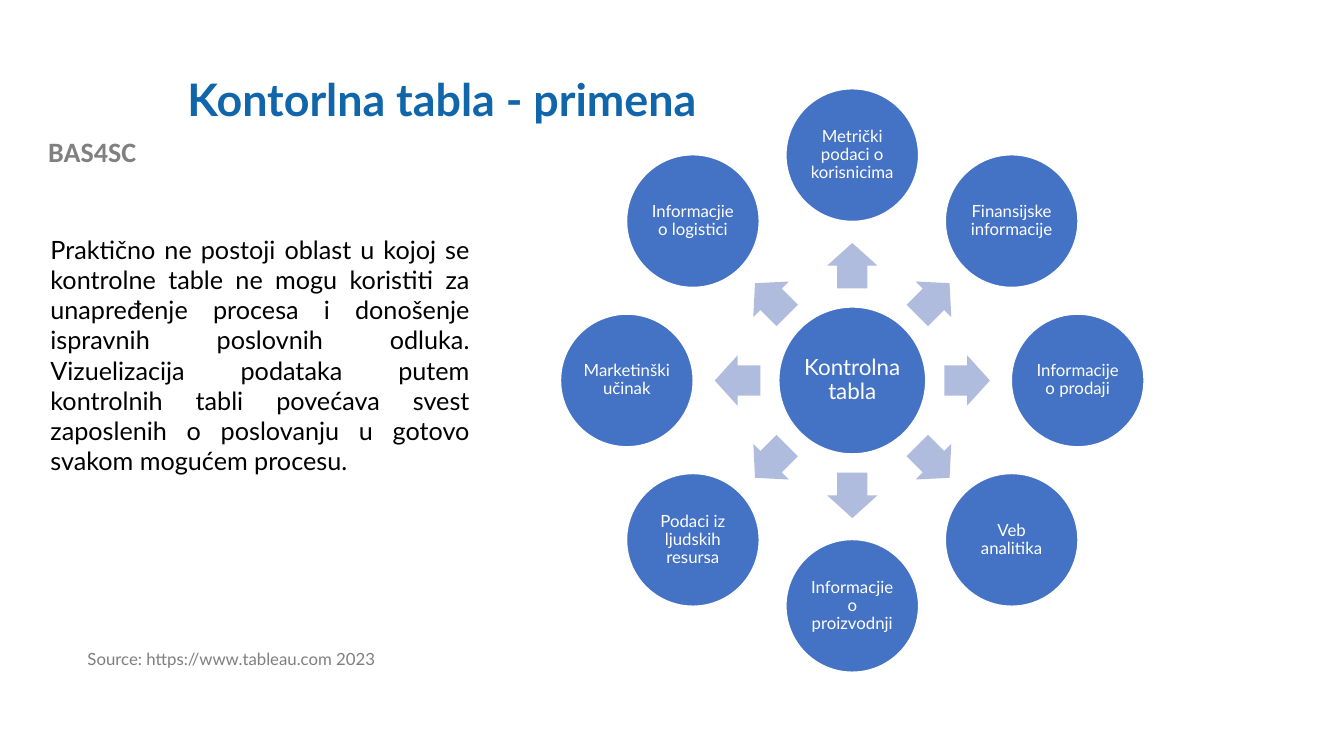
"""Build a slide with a dashboard hub and its ring of uses."""
import math
from dataclasses import dataclass

import pptx
import pptx.dml.color
import pptx.enum.shapes
import pptx.enum.text
import pptx.oxml.ns
import pptx.util
from lxml import etree

Pt = pptx.util.Pt
RGBColor = pptx.dml.color.RGBColor
Align = pptx.enum.text.PP_ALIGN
Anchor = pptx.enum.text.MSO_ANCHOR
Kind = pptx.enum.shapes.MSO_SHAPE

WHITE = RGBColor(0xFF, 0xFF, 0xFF)
BLACK = RGBColor(0x00, 0x00, 0x00)
NAVY = RGBColor(0x10, 0x65, 0xAB)
BLUE = RGBColor(0x44, 0x72, 0xC4)
PALE = RGBColor(0xB0, 0xBC, 0xDE)
GRAY = RGBColor(0x80, 0x80, 0x80)
DIM = RGBColor(0x7F, 0x7F, 0x7F)

MID_X, MID_Y = 608.8, 271.8
HUB, BALL = 105, 94.8
RING, ORBIT = 161, 82
ARROW_W, ARROW_H = 32.5, 36

USES = (
    "Metrički podaci o korisnicima",
    "Finansijske informacije",
    "Informacije o prodaji",
    "Veb analitika",
    "Informacjie o proizvodnji",
    "Podaci iz ljudskih resursa",
    "Marketinški učinak",
    "Informacjie o logistici",
)


@dataclass(frozen=True)
class Style:
    """Describe how one paragraph looks."""
    size: float
    color: RGBColor
    align: Align = Align.LEFT
    bold: bool = False
    face: str = "Lato"
    lead: float = 0.9


@dataclass(frozen=True)
class Box:
    """Hold a place and size in points."""
    left: float
    top: float
    width: float
    height: float

    def spread(self) -> tuple:
        """Give the four lengths in slide units."""
        return Pt(self.left), Pt(self.top), Pt(self.width), Pt(self.height)


def around(x: float, y: float, width: float, height: float) -> Box:
    """Make a box from its centre."""
    return Box(x - width / 2, y - height / 2, width, height)


def plain(para) -> None:
    """Drop the bullet and indent of a paragraph."""
    props = para._p.get_or_add_pPr()
    props.set("marL", "0")
    props.set("indent", "0")
    etree.SubElement(props, pptx.oxml.ns.qn("a:buNone"))


def write(frame, text: str, style: Style, anchor: Anchor = Anchor.TOP) -> None:
    """Fill a text frame with one styled paragraph."""
    frame.word_wrap = True
    frame.auto_size = pptx.enum.text.MSO_AUTO_SIZE.NONE
    frame.vertical_anchor = anchor
    frame.text = text
    para = frame.paragraphs[0]
    para.alignment = style.align
    para.line_spacing = style.lead
    para.space_before = Pt(0)
    plain(para)
    font = para.font
    font.name, font.size, font.bold = style.face, Pt(style.size), style.bold
    font.color.rgb = style.color


def place(shape, box: Box) -> None:
    """Move a placeholder into a box."""
    shape.left, shape.top, shape.width, shape.height = box.spread()


def label(slide, box: Box, text: str, style: Style) -> None:
    """Add a free text box."""
    write(slide.shapes.add_textbox(*box.spread()).text_frame, text, style)


def ball(slide, x: float, y: float, size: float, text: str, points: float) -> None:
    """Add a round node with centred text."""
    shape = slide.shapes.add_shape(Kind.OVAL, *around(x, y, size, size).spread())
    shape.shadow.inherit = False
    shape.fill.solid()
    shape.fill.fore_color.rgb = BLUE
    shape.line.color.rgb = WHITE
    shape.line.width = Pt(1)
    frame = shape.text_frame
    frame.margin_left = frame.margin_right = Pt(1.4)
    frame.margin_top = frame.margin_bottom = Pt(1.4)
    write(frame, text, Style(points, WHITE, Align.CENTER), Anchor.MIDDLE)


def arrow(slide, x: float, y: float, turn: float) -> None:
    """Add a block arrow that points outward."""
    box = around(x, y, ARROW_W, ARROW_H)
    shape = slide.shapes.add_shape(Kind.RIGHT_ARROW, *box.spread())
    shape.adjustments[0], shape.adjustments[1] = 0.6, 0.5
    shape.rotation = turn
    shape.shadow.inherit = False
    shape.fill.solid()
    shape.fill.fore_color.rgb = PALE
    shape.line.fill.background()


def wheel(slide) -> None:
    """Draw the hub, its arrows and the ring of uses."""
    ball(slide, MID_X, MID_Y, HUB, "Kontrolna tabla", 16)
    for i, use in enumerate(USES):
        turn = i * 360 / len(USES) - 90
        dx, dy = math.cos(math.radians(turn)), math.sin(math.radians(turn))
        arrow(slide, MID_X + ORBIT * dx, MID_Y + ORBIT * dy, turn % 360)
        ball(slide, MID_X + RING * dx, MID_Y + RING * dy, BALL, use, 12)


def main() -> None:
    """Build and save the deck."""
    deck = pptx.Presentation()
    deck.slide_width, deck.slide_height = Pt(960), Pt(540)
    slide = deck.slides.add_slide(deck.slide_layouts[1])
    title, body = slide.placeholders[0], slide.placeholders[1]

    place(title, Box(126.7, 28.8, 767.5, 87.8))
    write(title.text_frame, "Kontorlna tabla - primena",
          Style(32, NAVY, bold=True), Anchor.MIDDLE)

    place(body, Box(28.8, 163.6, 313.9, 181.4))
    write(body.text_frame,
          "Praktično ne postoji oblast u kojoj se kontrolne table ne mogu "
          "koristiti za unapređenje procesa i donošenje ispravnih poslovnih "
          "odluka. Vizuelizacija podataka putem kontrolnih tabli povećava "
          "svest zaposlenih o poslovanju u gotovo svakom mogućem procesu.",
          Style(18, BLACK, Align.JUSTIFY, lead=1.0))

    label(slide, Box(0, 92.2, 131.8, 31.7), "BAS4SC",
          Style(20, GRAY, Align.CENTER, True, "Calibri", 1.0))
    label(slide, Box(55.4, 461.5, 360.7, 37.4),
          "Source: https://www.tableau.com 2023", Style(12, DIM))
    wheel(slide)
    deck.save("out.pptx")


if __name__ == "__main__":
    main()
